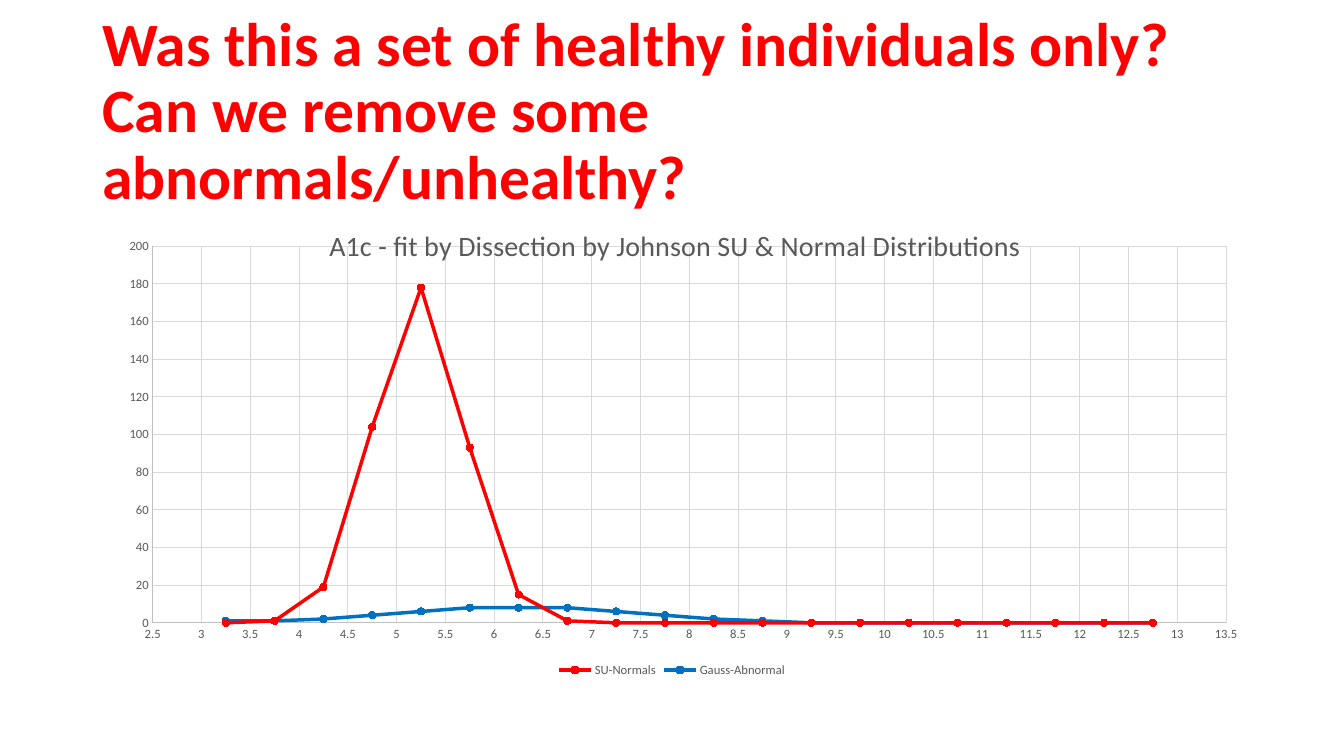
from pptx import Presentation, util as u
from pptx.chart.data import XyChartData
from pptx.dml.color import RGBColor
from pptx.enum import chart as ch, text
from pptx.oxml import parse_xml
from pptx.oxml.ns import qn, nsdecls

HUES = {"red": "FF0000", "blue": "0070C0", "grey": "595959",
        "axis": "BFBFBF", "grid": "D9D9D9"}
NORMAL = [0, 1, 19, 104, 178, 93, 15, 1] + [0] * 12
ABNORM = [1, 1, 2, 4, 6, 8, 8, 8, 6, 4, 2, 1] + [0] * 8


class Deck:
    """Holds the style and the current slide, and adds elements to it."""

    def __init__(self, face="Calibri", scale=9525):
        self.face, self.scale = face, scale
        self.prs = Presentation()
        self.prs.slide_width, self.prs.slide_height = self.px(1280, 720)
        self.slide = self.prs.slides.add_slide(self.prs.slide_layouts[6])

    def px(self, *nums):
        return [u.Emu(n * self.scale) for n in nums]

    def hue(self, name):
        return RGBColor.from_string(HUES[name])

    def style(self, font, size, hue, bold=False):
        font.name, font.size, font.bold = self.face, u.Pt(size), bold
        font.color.rgb = self.hue(hue)

    def stroke(self, line, hue, width):
        line.color.rgb, line.width = self.hue(hue), u.Pt(width)

    def title(self, box, words, size, hue):
        frame = self.slide.shapes.add_textbox(*self.px(*box)).text_frame
        frame.word_wrap = True
        frame.vertical_anchor = text.MSO_ANCHOR.MIDDLE
        para = frame.paragraphs[0]
        para.text, para.line_spacing = words, 0.9
        self.style(para.font, size, hue, True)

    def place(self, node, index, **spots):
        for old in node.findall(qn("c:layout")):
            node.remove(old)
        tags = "".join(f'<c:{k} val="{v}"/>' for k, v in spots.items())
        node.insert(index, parse_xml(
            f'<c:layout {nsdecls("c")}><c:manualLayout>{tags}'
            '</c:manualLayout></c:layout>'))

    def axis(self, axis, low, high, step, form):
        axis.minimum_scale, axis.maximum_scale = low, high
        axis.major_unit = step
        axis.major_tick_mark = axis.minor_tick_mark = ch.XL_TICK_MARK.NONE
        axis.has_major_gridlines = True
        self.stroke(axis.major_gridlines.format.line, "grid", 0.75)
        self.stroke(axis.format.line, "axis", 0.75)
        self.style(axis.tick_labels.font, 9, "grey")
        axis.tick_labels.number_format = form
        axis.tick_labels.number_format_is_linked = False

    def curve(self, series, hue):
        series.smooth = True
        self.stroke(series.format.line, hue, 2.5)
        mark = series.marker
        mark.style, mark.size = ch.XL_MARKER_STYLE.CIRCLE, 5
        mark.format.fill.solid()
        mark.format.fill.fore_color.rgb = self.hue(hue)
        self.stroke(mark.format.line, hue, 0.75)

    def chart(self, box, head, curves):
        data = XyChartData()
        for name, vals, _ in curves:
            series = data.add_series(name)
            for i, val in enumerate(vals):
                series.add_data_point(3.25 + i / 2, val)
        chart = self.slide.shapes.add_chart(
            ch.XL_CHART_TYPE.XY_SCATTER_SMOOTH, *self.px(*box), data).chart
        self.style(chart.font, 10, "grey")
        para = chart.chart_title.text_frame.paragraphs[0]
        para.text = head
        self.style(para.font, 20, "grey")
        self.place(chart.chart_title._element, 1,
                   xMode="edge", yMode="edge", x=0.2, y=0.04)
        plot = chart.plots[0]
        plot.vary_by_categories = False
        self.place(chart._chartSpace.chart.plotArea, 0,
                   layoutTarget="inner", xMode="edge", yMode="edge",
                   x=0.052, y=0.093, w=0.926, h=0.785)
        self.axis(chart.category_axis, 2.5, 13.5, 0.5, "General")
        self.axis(chart.value_axis, 0, 200, 20, "0")
        for series, (_, _, hue) in zip(plot.series, curves):
            self.curve(series, hue)
        chart.has_legend = True
        chart.legend.position = ch.XL_LEGEND_POSITION.BOTTOM
        chart.legend.include_in_layout = False
        self.style(chart.legend.font, 9, "grey")


def main():
    deck = Deck()
    deck.title((88, 38, 1104, 139),
               "Was this a set of healthy individuals only?\v"
               "Can we remove some abnormals/unhealthy?", 44, "red")
    deck.chart((88, 192, 1104, 457),
               "A1c - fit by Dissection by Johnson SU & Normal Distributions",
               [("SU-Normals", NORMAL, "red"),
                ("Gauss-Abnormal", ABNORM, "blue")])
    deck.prs.save("out.pptx")


if __name__ == "__main__":
    main()
